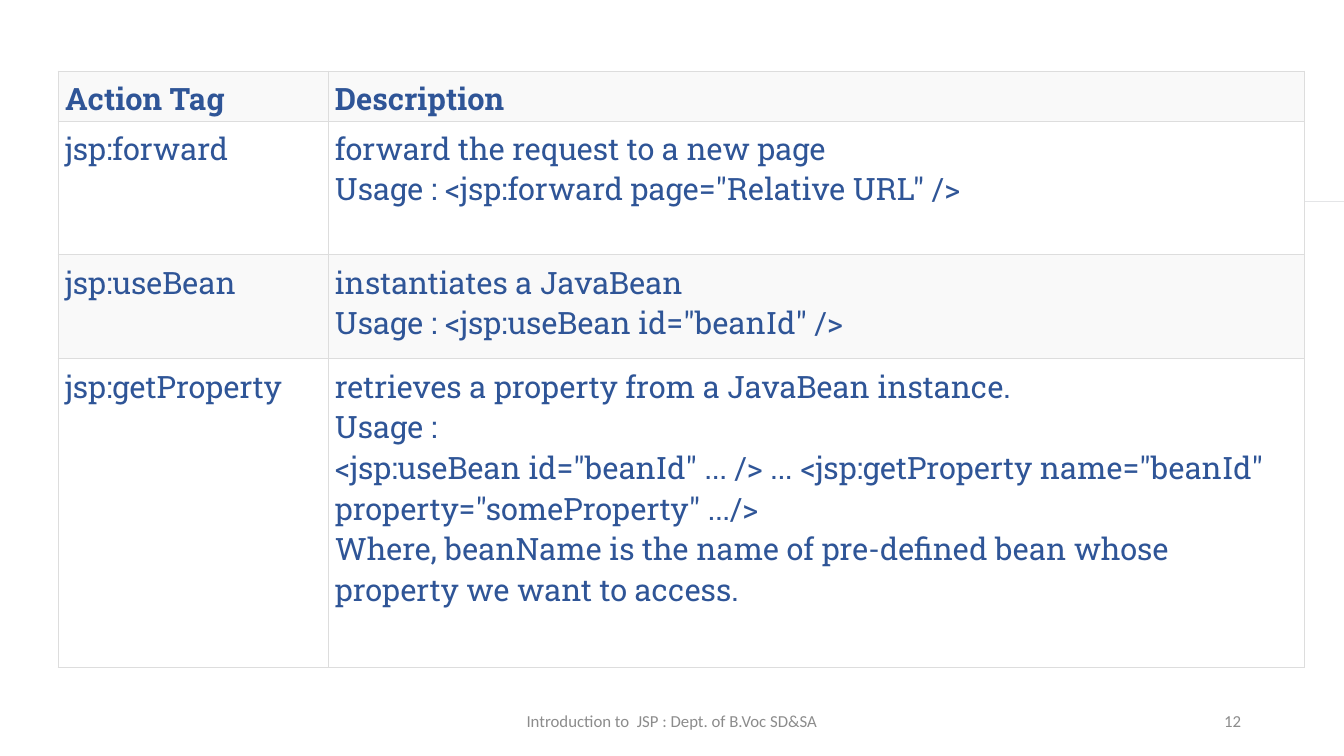
from dataclasses import dataclass

from lxml.etree import SubElement as Sub
from pptx import Presentation
from pptx.dml.color import RGBColor
from pptx.enum.shapes import MSO_CONNECTOR as Conn
from pptx.enum.text import MSO_ANCHOR as Anchor, PP_ALIGN as Align
from pptx.oxml.ns import qn
from pptx.util import Emu, Pt

SCALE = 914400 / 100.8
INK, GRID, RULE, GREY = "2F5597", "DDDDDD", "E4E5E7", "8C8C8C"
BANDS = ("F9F9F9", "FFFFFF")


@dataclass
class Row:
    height: int
    tag: str
    lines: list[str]
    foot: int = 7


@dataclass
class Note:
    left: int
    width: int
    text: str
    align: Align


ROWS = [
    Row(50, "Action Tag", ["Description"], foot=2),
    Row(134, "jsp:forward", [
        "forward the request to a new page",
        'Usage : <jsp:forward page="Relative URL" />',
    ]),
    Row(104, "jsp:useBean", [
        "instantiates a JavaBean",
        'Usage : <jsp:useBean id="beanId" />',
    ]),
    Row(309, "jsp:getProperty", [
        "retrieves a property from a JavaBean instance.",
        "Usage :",
        '<jsp:useBean id="beanId" ... /> ... <jsp:getProperty name="beanId" '
        'property="someProperty" .../>',
        "Where, beanName is the name of pre-defined bean whose property "
        "we want to access.",
    ]),
]
COLS = (270, 976)
NOTES = [
    Note(445, 454, "Introduction to  JSP : Dept. of B.Voc SD&SA", Align.CENTER),
    Note(949, 302, "12", Align.RIGHT),
]


def px(num: int) -> Emu:
    return Emu(round(num * SCALE))


def tint(code: str) -> RGBColor:
    return RGBColor.from_string(code)


def apply(item, form: dict) -> None:
    for name, value in form.items():
        setattr(item, name, value)


def write(frame, lines: list[str], form: dict, color: str,
          align: Align = Align.LEFT) -> None:
    for i, line in enumerate(lines):
        para = frame.add_paragraph() if i else frame.paragraphs[0]
        para.alignment = align
        run = para.add_run()
        run.text = line
        apply(run.font, form)
        run.font.color.rgb = tint(color)


def edge(cell) -> None:
    props = cell._tc.get_or_add_tcPr()
    for i, side in enumerate(("lnL", "lnR", "lnT", "lnB")):
        line = props.makeelement(qn(f"a:{side}"), {"w": str(Pt(0.75))})
        fill = Sub(line, qn("a:solidFill"))
        Sub(fill, qn("a:srgbClr"), val=GRID)
        props.insert(i, line)


def draw_table(slide) -> None:
    high = sum(row.height for row in ROWS)
    table = slide.shapes.add_table(len(ROWS), len(COLS), px(58), px(71),
                                   px(sum(COLS)), px(high)).table
    for col, width in zip(table.columns, COLS):
        col.width = px(width)
    pad = dict.fromkeys(("margin_left", "margin_right", "margin_top"), px(7))
    for r, row in enumerate(ROWS):
        table.rows[r].height = px(row.height)
        form = {"name": "Roboto Slab", "size": Pt(22), "bold": r == 0}
        for c, lines in enumerate(([row.tag], row.lines)):
            cell = table.cell(r, c)
            apply(cell, pad | {"margin_bottom": px(row.foot)})
            cell.fill.solid()
            cell.fill.fore_color.rgb = tint(BANDS[r % 2])
            edge(cell)
            write(cell.text_frame, lines, form, INK)


def draw_rule(slide) -> None:
    rule = slide.shapes.add_connector(Conn.STRAIGHT, px(392), px(201),
                                      px(1344), px(201))
    rule.line.color.rgb = tint(RULE)
    rule.line.width = Pt(0.5)
    Sub(rule._element.spPr, qn("a:effectLst"))


def draw_note(slide, note: Note) -> None:
    box = slide.shapes.add_textbox(px(note.left), px(701), px(note.width), px(40))
    frame = box.text_frame
    apply(frame, {"word_wrap": True, "vertical_anchor": Anchor.MIDDLE})
    write(frame, [note.text], {"name": "Calibri", "size": Pt(12)}, GREY, note.align)


def main() -> None:
    deck = Presentation()
    apply(deck, {"slide_width": px(1344), "slide_height": px(756)})
    slide = deck.slides.add_slide(deck.slide_layouts[6])
    # Hairline to the page edge, behind the table so the text stays clear
    draw_rule(slide)
    # Table of action tags
    draw_table(slide)
    # Footer and page number
    for note in NOTES:
        draw_note(slide, note)
    deck.save("out.pptx")


if __name__ == "__main__":
    main()
